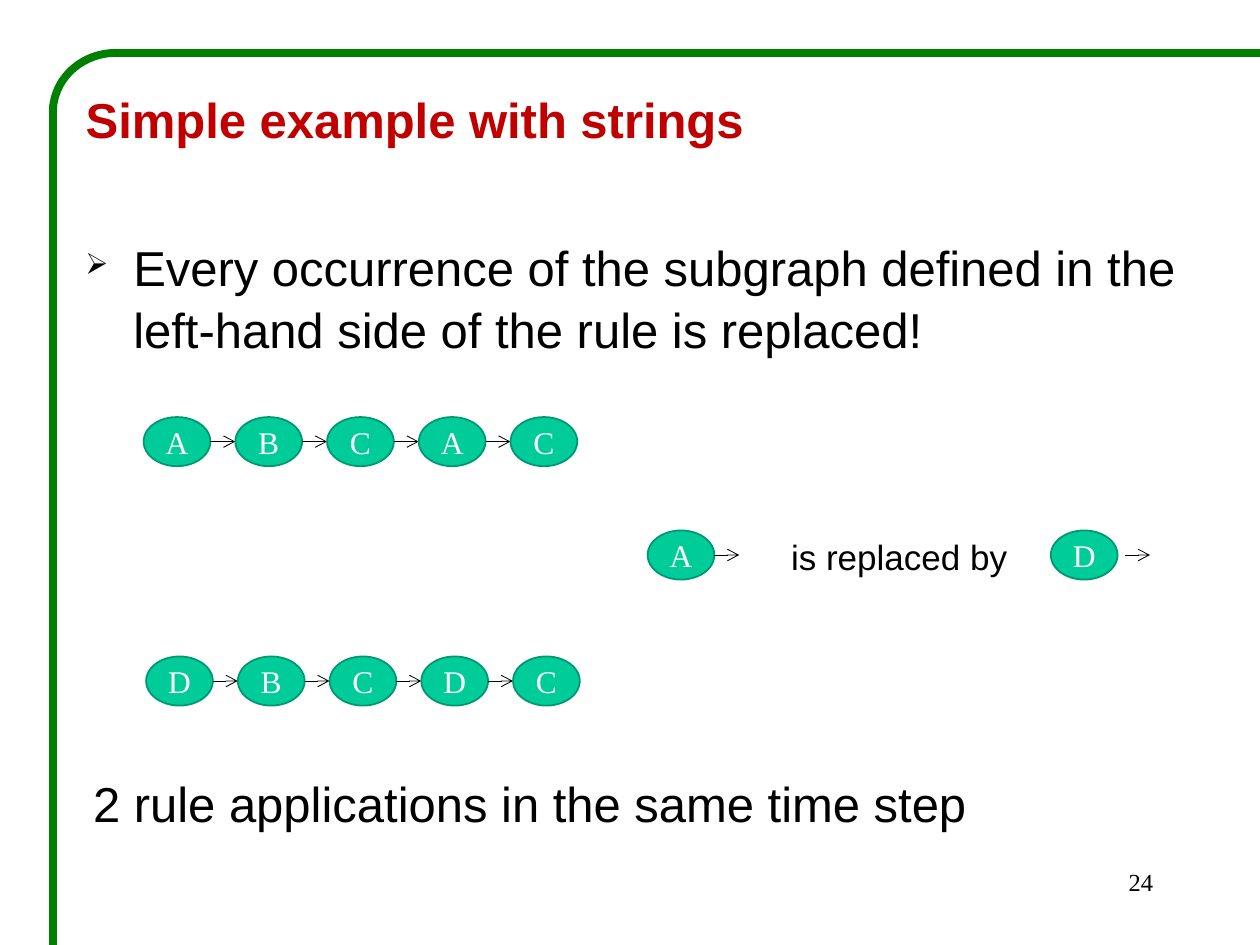
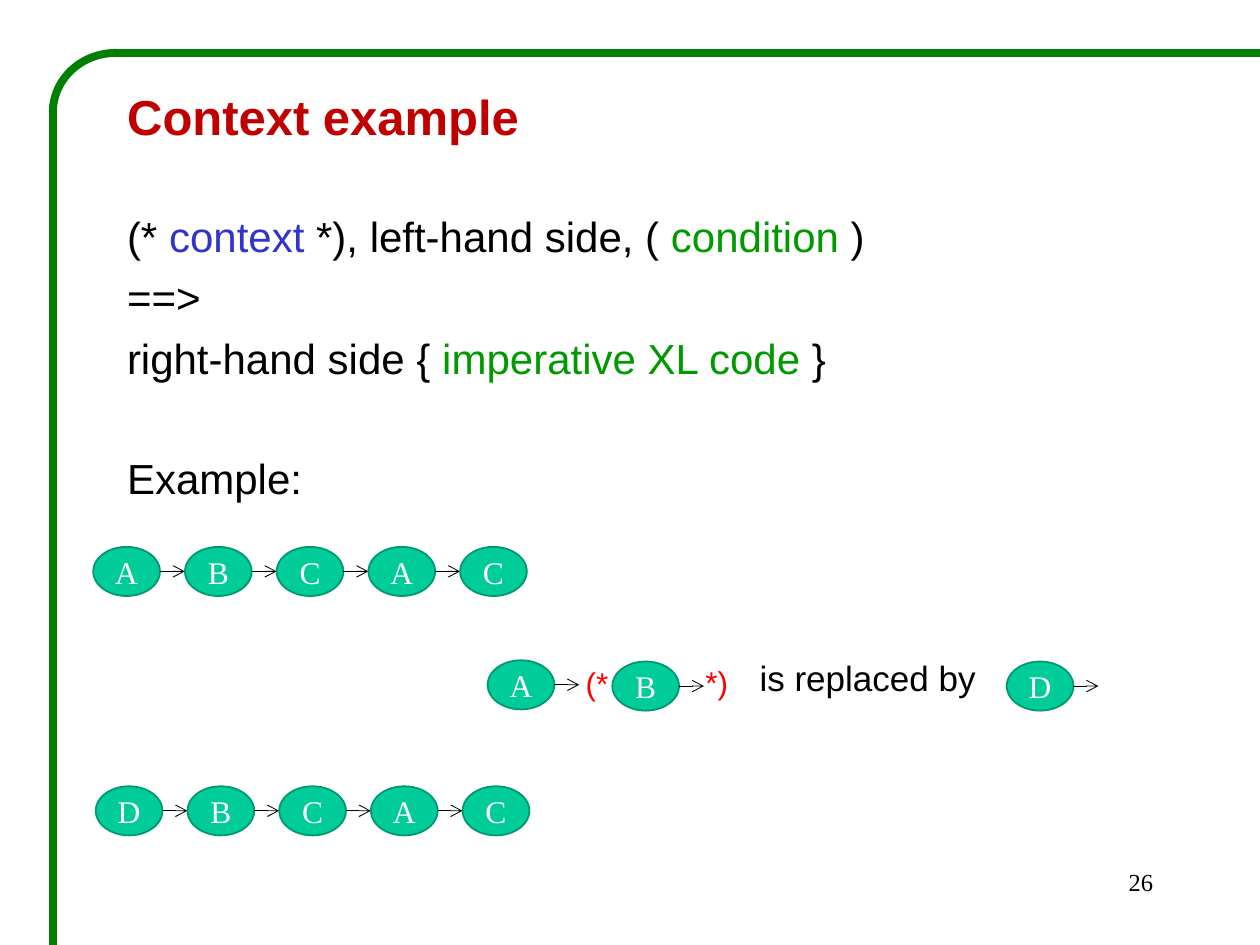
from lxml.etree import SubElement
from pptx import Presentation
from pptx.dml.color import RGBColor
from pptx.enum.shapes import MSO_CONNECTOR as CXN, MSO_SHAPE as SHAPE
from pptx.enum.text import MSO_ANCHOR as ANCHOR, MSO_AUTO_SIZE as AUTO, PP_ALIGN as ALIGN
from pptx.oxml.ns import qn
from pptx.util import Inches, Pt

COLORS = {
    "title": "C00000", "text": "000000", "context": "3333CC", "code": "009900",
    "mark": "FF0000", "node": "00CC99", "node_line": "009771",
    "node_text": "FFFFFF", "frame": "008000",
}
SANS, SERIF = "Arial", "Times New Roman"

# Grid: 100 columns by 75 rows
WIDTH, HEIGHT = Inches(10), Inches(7.5)
COLS, ROWS = 100, 75
NODE_W, NODE_H = 5.3, 3.9
ARROW_W = 1.97
PITCH = 7.28
FRAME_EDGE, FRAME_BEND = 4.2, 9.2
HANG = Inches(0.38)
LINE_SPACING = 1.045


def x(cols):
    return round(WIDTH * cols / COLS)


def y(rows):
    return round(HEIGHT * rows / ROWS)


def place(left, top, width, height):
    return x(left), y(top), x(width), y(height)


def rgb(name):
    return RGBColor.from_string(COLORS[name])


def add_run(p, text, size, color="text", font=SANS, bold=False):
    r = p.add_run()
    r.text = text
    r.font.size, r.font.name, r.font.bold = Pt(size), font, bold
    r.font.color.rgb = rgb(color)


def add_text(s, box, text, size, color="text", font=SANS, align=ALIGN.LEFT, wrap=True):
    tf = s.shapes.add_textbox(*place(*box)).text_frame
    tf.word_wrap = wrap
    p = tf.paragraphs[0]
    p.alignment = align
    add_run(p, text, size, color, font)
    return p


def add_line(s, start, end, color, weight):
    line = s.shapes.add_connector(CXN.STRAIGHT, x(start[0]), y(start[1]), x(end[0]), y(end[1]))
    line.line.color.rgb = rgb(color)
    line.line.width = Pt(weight)
    SubElement(line._element.spPr, qn("a:effectLst"))
    return line


def add_arrow(s, left, row):
    arrow = add_line(s, (left, row), (left + ARROW_W, row), "text", 0.5)
    SubElement(arrow.line._get_or_add_ln(), qn("a:tailEnd"), type="arrow")


def add_node(s, left, top, letter):
    sp = s.shapes.add_shape(SHAPE.OVAL, *place(left, top, NODE_W, NODE_H))
    sp.shadow.inherit = False
    sp.fill.solid()
    sp.fill.fore_color.rgb = rgb("node")
    sp.line.color.rgb = rgb("node_line")
    sp.line.width = Pt(1)
    tf = sp.text_frame
    tf.margin_left = tf.margin_right = tf.margin_top = tf.margin_bottom = 0
    tf.vertical_anchor = ANCHOR.MIDDLE
    p = tf.paragraphs[0]
    p.alignment = ALIGN.CENTER
    add_run(p, letter, 18, "node_text", SERIF)


def add_node_with_arrow(s, left, top, letter, gap=0):
    add_node(s, left, top, letter)
    add_arrow(s, left + NODE_W + gap, top + NODE_H / 2)


def add_chain(s, left, top, letters):
    for i, letter in enumerate(letters[:-1]):
        add_node_with_arrow(s, left + i * PITCH, top, letter)
    add_node(s, left + (len(letters) - 1) * PITCH, top, letters[-1])


def add_frame(s):
    add_line(s, (COLS, FRAME_EDGE), (FRAME_BEND, FRAME_EDGE), "frame", 4.5)
    add_line(s, (FRAME_EDGE, 8.3), (FRAME_EDGE, ROWS), "frame", 4.5)
    corner = s.shapes.add_shape(SHAPE.ARC, *place(FRAME_EDGE, FRAME_EDGE, 10, 9.4))
    corner.adjustments[0], corner.adjustments[1] = 108, 162  # 180 to 270 degrees
    corner.shadow.inherit = False
    corner.fill.background()
    corner.line.color.rgb = rgb("frame")
    corner.line.width = Pt(4.5)


def add_framed_slide(prs, title, box, number):
    s = prs.slides.add_slide(prs.slide_layouts[5])
    sp = s.shapes.title
    sp.left, sp.top, sp.width, sp.height = place(*box)
    tf = sp.text_frame
    tf.word_wrap = True
    tf.auto_size = AUTO.NONE
    tf.vertical_anchor = ANCHOR.TOP
    p = tf.paragraphs[0]
    p.alignment = ALIGN.LEFT
    add_run(p, title, 28, "title", bold=True)
    add_frame(s)
    add_text(s, (71.7, 68.3, 20.8, 5), number, 14, font=SERIF, align=ALIGN.RIGHT)
    return s


def add_bullet(p):
    pPr = p._p.get_or_add_pPr()
    pPr.set("marL", str(HANG))
    pPr.set("indent", str(-HANG))
    SubElement(pPr, qn("a:buSzPct"), val="60000")
    SubElement(pPr, qn("a:buChar"), char="➢")


def add_syntax(s, box, lines):
    """Add lines given as (space before, [(text, colour), ...])."""
    tf = s.shapes.add_textbox(*place(*box)).text_frame
    tf.word_wrap = True
    for i, (space, runs) in enumerate(lines):
        p = tf.add_paragraph() if i else tf.paragraphs[0]
        p.space_before = Pt(space)
        p.line_spacing = LINE_SPACING
        for text, color in runs:
            add_run(p, text, 24, color)


def build_strings_slide(prs):
    s = add_framed_slide(prs, "Simple example with strings", (5.8, 6.6, 90, 6), "24")
    p = add_text(s, (5.8, 18.2, 90, 10.5),
                 "Every occurrence of the subgraph defined in the left-hand side "
                 "of the rule is replaced!", 28)
    p.line_spacing = LINE_SPACING
    add_bullet(p)
    add_chain(s, 11.4, 33.1, "ABCAC")
    add_node_with_arrow(s, 51.4, 42.1, "A")
    add_text(s, (61.8, 42, 19.3, 4.4), "is replaced by", 20, wrap=False)
    add_node_with_arrow(s, 83.4, 42.1, "D", gap=0.6)
    add_chain(s, 11.6, 52.1, "DBCDC")
    add_text(s, (6.4, 60.9, 72.7, 7), "2 rule applications in the same time step", 28)


def build_context_slide(prs):
    s = add_framed_slide(prs, "Context example", (9.1, 6.4, 66.9, 6), "26")
    add_syntax(s, (9.1, 16.1, 66.9, 24), [
        (0, [("(* ", "text"), ("context", "context"), (" *), left-hand side, ( ", "text"),
             ("condition", "code"), (" )", "text")]),
        (4.8, [("==>", "text")]),
        (4.8, [("right-hand side { ", "text"), ("imperative XL code ", "code"), ("}", "text")]),
        (38.4, [("Example:", "text")]),
    ])
    add_chain(s, 7.4, 43.4, "ABCAC")
    add_node_with_arrow(s, 38.7, 52.4, "A")
    add_node_with_arrow(s, 48.6, 52.5, "B")
    for left, top, mark in ((45.5, 52.2, "(*"), (55, 52.1, "*)")):
        add_text(s, (left, top, 3.8, 4), mark, 18, "mark", wrap=False)
    add_text(s, (59.3, 51.6, 19.3, 4.4), "is replaced by", 20, wrap=False)
    add_node_with_arrow(s, 79.9, 52.5, "D")
    add_chain(s, 7.6, 62.4, "DBCAC")


def main():
    prs = Presentation()
    prs.slide_width, prs.slide_height = WIDTH, HEIGHT
    build_strings_slide(prs)
    build_context_slide(prs)
    prs.save("out.pptx")


if __name__ == "__main__":
    main()
